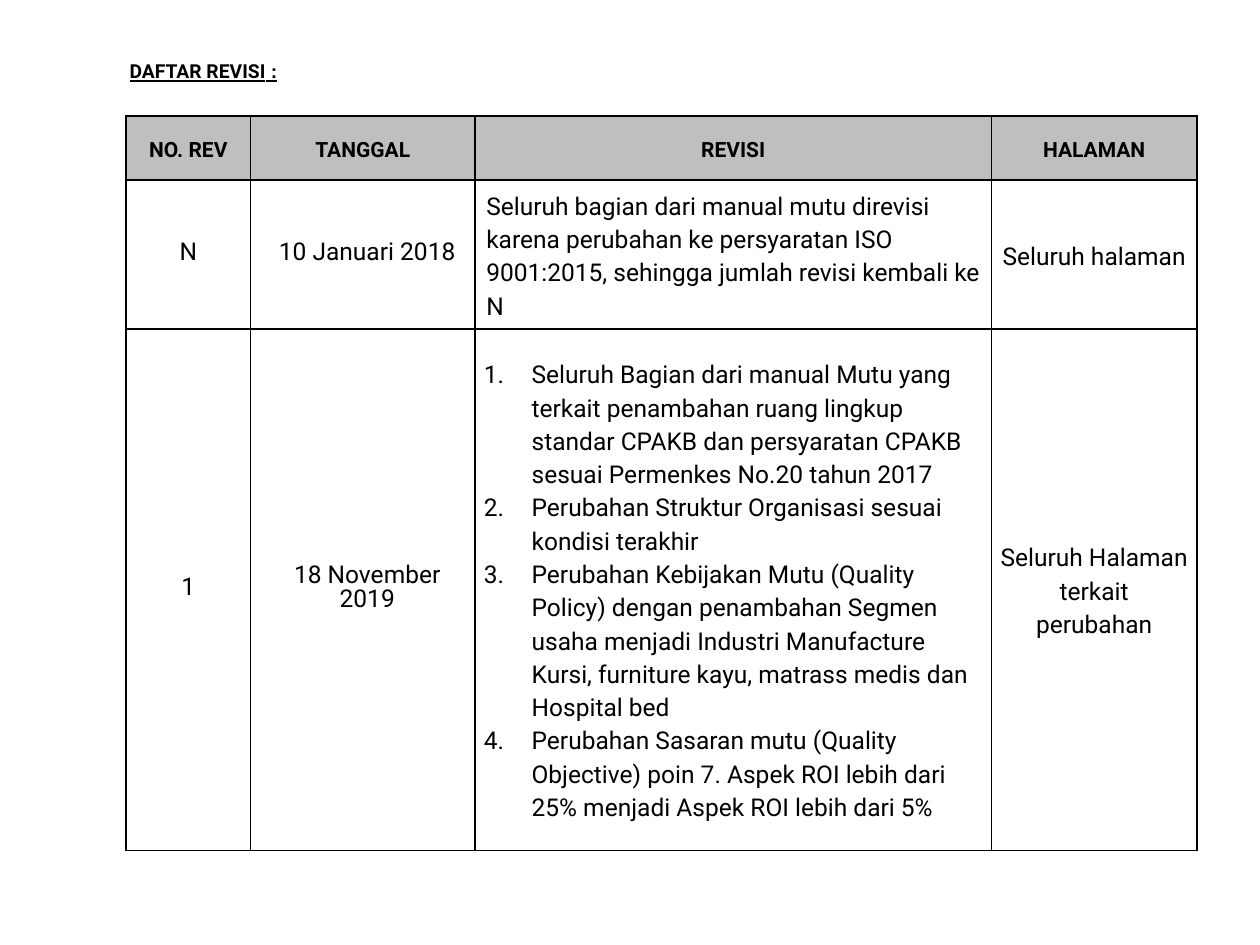
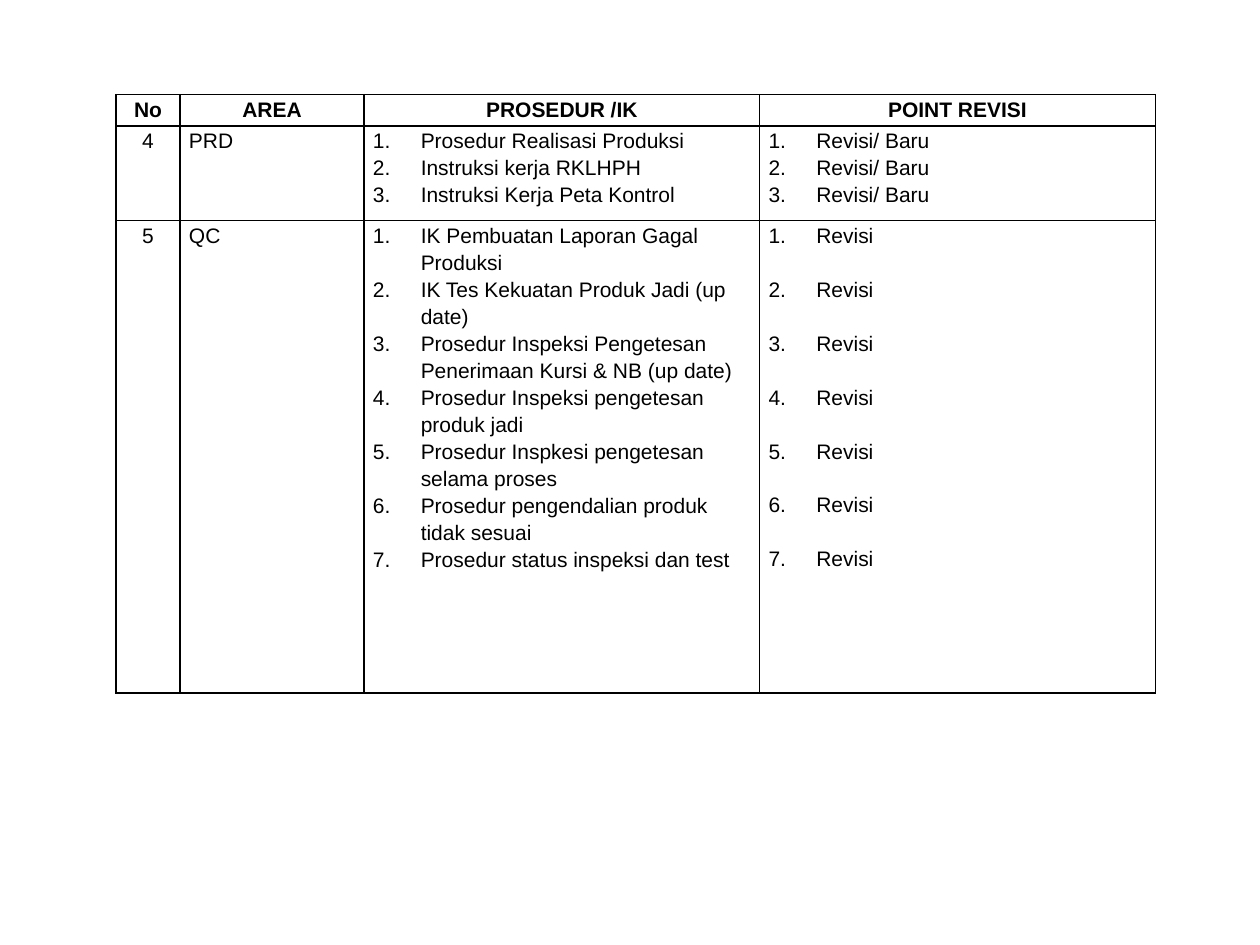
from dataclasses import dataclass

from lxml import etree
from pptx import Presentation
from pptx.dml.color import RGBColor
from pptx.enum import text
from pptx.oxml import ns
from pptx.util import Inches, Pt

BLACK = RGBColor(0x00, 0x00, 0x00)
HEADER_GREY = RGBColor(0xBF, 0xBF, 0xBF)
CENTER, LEFT = text.PP_ALIGN.CENTER, text.PP_ALIGN.LEFT
LINE_SPACING = 1.15
TIGHT_SPACING = Pt(13.4)
SKIPPED_LINE = Pt(15.4)
HANGING = 0.38


@dataclass
class Column:
    title: str
    width: float
    align: int = LEFT
    indent: float = 0
    spacing: object = LINE_SPACING
    item_gap: object = Pt(0)


@dataclass
class TableStyle:
    font: str
    body_size: int
    anchor: int
    header_fill: object = None


def set_indent(p, left, first=0):
    pPr = p._p.get_or_add_pPr()
    pPr.set("marL", str(Inches(left)))
    pPr.set("indent", str(Inches(first)))
    return pPr


def set_font(font, name, size, bold=False):
    font.name, font.size, font.bold = name, Pt(size), bold
    font.color.rgb = BLACK


def add_borders(cell):
    tcPr = cell._tc.get_or_add_tcPr()
    for side in ("lnL", "lnR", "lnT", "lnB"):
        ln = etree.SubElement(tcPr, ns.qn(f"a:{side}"), w=str(Pt(1)))
        fill = etree.SubElement(ln, ns.qn("a:solidFill"))
        etree.SubElement(fill, ns.qn("a:srgbClr"), val=str(BLACK))


def fill_cell(cell, content, column, style, header=False):
    add_borders(cell)
    if header and style.header_fill:
        cell.fill.solid()
        cell.fill.fore_color.rgb = style.header_fill
    else:
        cell.fill.background()
    cell.vertical_anchor = style.anchor
    cell.margin_left = cell.margin_right = Inches(0.07)
    cell.margin_top = cell.margin_bottom = 0

    numbered = isinstance(content, list)
    items = content if numbered else [content]
    tf = cell.text_frame
    for i, item in enumerate(items):
        p = tf.add_paragraph() if i else tf.paragraphs[0]
        p.add_run().text = item
        p.alignment = CENTER if header else column.align
        p.line_spacing = LINE_SPACING if header else column.spacing
        set_font(p.font, style.font, 12 if header else style.body_size, header)
        set_font(p.runs[0].font, style.font, 12 if header else style.body_size, header)
        if numbered:
            p.space_before = column.item_gap if i else Pt(0)
            pPr = set_indent(p, HANGING, -HANGING)
            bullet_font = etree.Element(ns.qn("a:buFont"), typeface="+mj-lt")
            number = etree.Element(ns.qn("a:buAutoNum"), type="arabicPeriod")
            pPr.find(ns.qn("a:spcBef")).addnext(bullet_font)
            bullet_font.addnext(number)
        elif not header:
            set_indent(p, column.indent)


def add_table(slide, left, top, columns, heights, rows, style):
    width = sum(c.width for c in columns)
    frame = slide.shapes.add_table(len(heights), len(columns), Inches(left),
                                   Inches(top), Inches(width), Inches(sum(heights)))
    table = frame.table
    table.first_row = table.horz_banding = False
    for row, height in zip(table.rows, heights):
        row.height = Inches(height)
    for c, column in enumerate(columns):
        table.columns[c].width = Inches(column.width)
        fill_cell(table.cell(0, c), column.title, column, style, header=True)
        for r, row in enumerate(rows, start=1):
            fill_cell(table.cell(r, c), row[c], column, style)


def add_heading(slide):
    box = slide.shapes.add_textbox(Inches(0.83), Inches(0.42), Inches(9.17), Inches(0.29))
    tf = box.text_frame
    tf.word_wrap = True
    tf.auto_size = text.MSO_AUTO_SIZE.SHAPE_TO_FIT_TEXT
    tf.vertical_anchor = text.MSO_ANCHOR.MIDDLE
    p = tf.paragraphs[0]
    set_indent(p, 0, 0.1)
    for words, font in (("DAFTAR REVISI", "Roboto"), (" :", "Arial")):
        r = p.add_run()
        r.text = words
        set_font(r.font, font, 11, True)
        r.font.underline = True


def revision_list(slide):
    columns = [
        Column("NO. REV", 0.99, CENTER, spacing=TIGHT_SPACING),
        Column("TANGGAL", 1.78, CENTER, 0.07, TIGHT_SPACING),
        Column("REVISI", 4.1, indent=0.02),
        Column("HALAMAN", 1.63, CENTER),
    ]
    rows = [
        ["N", "10 Januari 2018",
         "Seluruh bagian dari manual mutu direvisi karena perubahan ke persyaratan "
         "ISO 9001:2015, sehingga jumlah revisi kembali ke N",
         "Seluruh halaman"],
        ["1", "18 November 2019",
         ["Seluruh Bagian dari manual Mutu yang terkait penambahan ruang lingkup "
          "standar CPAKB dan persyaratan CPAKB sesuai Permenkes No.20 tahun 2017",
          "Perubahan Struktur Organisasi sesuai kondisi terakhir",
          "Perubahan Kebijakan Mutu (Quality Policy) dengan penambahan Segmen usaha "
          "menjadi Industri Manufacture Kursi, furniture kayu, matrass medis dan "
          "Hospital bed",
          "Perubahan Sasaran mutu (Quality Objective) poin 7. Aspek ROI lebih dari "
          "25% menjadi Aspek ROI lebih dari 5%"],
         "Seluruh Halaman terkait perubahan"],
    ]
    style = TableStyle("Roboto", 14, text.MSO_ANCHOR.MIDDLE, HEADER_GREY)
    add_table(slide, 1, 0.92, columns, [0.51, 1.18, 4.14], rows, style)
    add_heading(slide)


def procedure_list(slide):
    columns = [
        Column("No", 0.51, CENTER),
        Column("AREA", 1.46),
        Column("PROSEDUR /IK", 3.14),
        Column("POINT REVISI", 3.14),
    ]
    qc_procedures = [
        "IK Pembuatan Laporan Gagal Produksi",
        "IK Tes Kekuatan Produk Jadi (up date)",
        "Prosedur Inspeksi Pengetesan Penerimaan Kursi & NB (up date)",
        "Prosedur Inspeksi pengetesan produk jadi",
        "Prosedur Inspkesi pengetesan selama proses",
        "Prosedur pengendalian produk tidak sesuai",
        "Prosedur status inspeksi dan test",
    ]
    prd_procedures = [
        "Prosedur Realisasi Produksi",
        "Instruksi kerja RKLHPH",
        "Instruksi Kerja Peta Kontrol",
    ]
    rows = [
        ["4", "PRD", prd_procedures, ["Revisi/ Baru"] * len(prd_procedures)],
        ["5", "QC", qc_procedures, ["Revisi"] * len(qc_procedures)],
    ]
    style = TableStyle("Arial", 12, text.MSO_ANCHOR.TOP)
    add_table(slide, 0.92, 0.75, columns, [0.25, 0.75, 3.75], rows, style)
    table = slide.shapes[0].table
    for p in table.cell(2, 3).text_frame.paragraphs[1:]:
        p.space_before = SKIPPED_LINE


def main():
    prs = Presentation()
    prs.slide_width, prs.slide_height = Inches(10), Inches(7.5)
    for build in (revision_list, procedure_list):
        build(prs.slides.add_slide(prs.slide_layouts[6]))
    prs.save("out.pptx")


if __name__ == "__main__":
    main()
